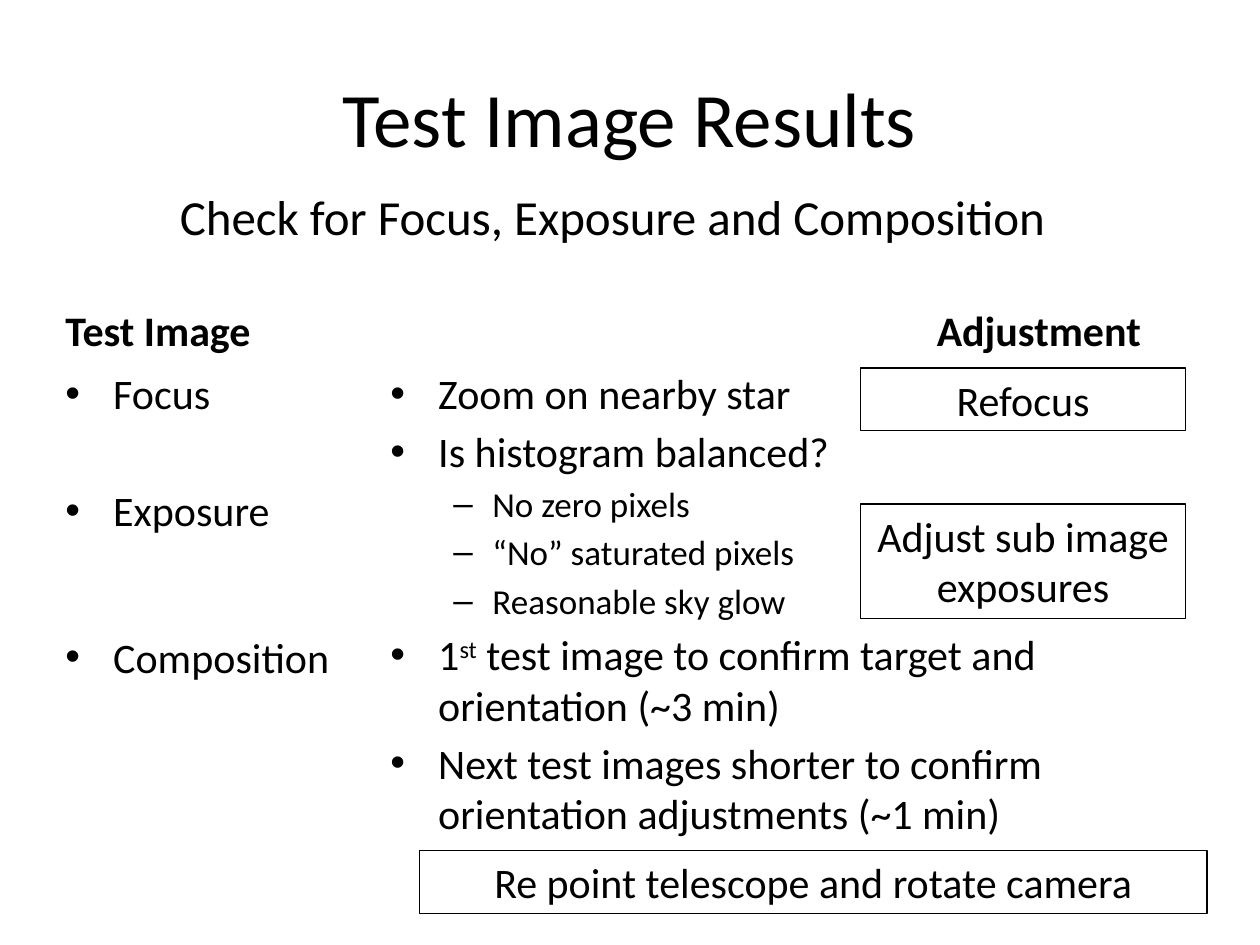
"""Build the slide on test image results and their adjustments."""
from dataclasses import dataclass

from lxml.etree import SubElement
from pptx import Presentation
from pptx.dml.color import RGBColor
from pptx.enum.shapes import MSO_SHAPE as Shape
from pptx.enum.text import MSO_ANCHOR as Anchor, PP_ALIGN as Align
from pptx.oxml.ns import qn
from pptx.util import Inches, Pt

BLACK = RGBColor(0, 0, 0)
FONT = "Calibri"
ADJUST_LEFT, ADJUST_WIDTH = 6.83, 2.58
LIST_TOP, LIST_HEIGHT = 2.87, 4.32


@dataclass(frozen=True)
class Level:
    mark: str
    left: float
    hanging: float
    size: float
    before: float


@dataclass(frozen=True)
class Item:
    text: str
    level: Level
    before: float | None = None


@dataclass(frozen=True)
class Box:
    text: str
    left: float
    top: float
    width: float
    height: float


CHECK = Level("•", 0.38, 0.38, 24, 4.3)
DETAIL = Level("–", 0.81, 0.31, 20, 3.6)

STEPS = (
    Item("Focus", CHECK),
    Item("Exposure", CHECK, 38.1),
    Item("Composition", CHECK, 54.7),
)
CRITERIA = (
    Item("Zoom on nearby star", CHECK),
    Item("Is histogram balanced?", CHECK),
    Item("No zero pixels", DETAIL),
    Item("“No” saturated pixels", DETAIL),
    Item("Reasonable sky glow", DETAIL),
    Item("1^st^ test image to confirm target and orientation (~3 min)", CHECK),
    Item("Next test images shorter to confirm orientation adjustments (~1 min)", CHECK),
)
ADJUSTMENTS = (
    Box("Refocus", ADJUST_LEFT, 2.92, ADJUST_WIDTH, 0.5),
    Box("Adjust sub image exposures", ADJUST_LEFT, 4, ADJUST_WIDTH, 0.91),
    Box("Re point telescope and rotate camera", 3.33, 6.75, 6.25, 0.5),
)


def write(paragraph, text: str, *, size: float = 24, bold: bool = False,
          align: Align = Align.LEFT) -> None:
    """Write text into a paragraph, raising the parts between carets."""
    paragraph.alignment = align
    for index, part in enumerate(text.split("^")):
        run = paragraph.add_run()
        run.text = part
        run.font.name = FONT
        run.font.size = Pt(size)
        run.font.bold = bold
        run.font.color.rgb = BLACK
        if index % 2:
            run._r.get_or_add_rPr().set("baseline", "30000")


def add_frame(slide, box: Box, anchor: Anchor = Anchor.TOP):
    """Add a wrapping text box and return its text frame."""
    frame = slide.shapes.add_textbox(
        Inches(box.left), Inches(box.top), Inches(box.width), Inches(box.height)
    ).text_frame
    frame.word_wrap = True
    frame.vertical_anchor = anchor
    return frame


def add_heading(slide, box: Box, *, anchor: Anchor, **style) -> None:
    """Add a single line of text."""
    write(add_frame(slide, box, anchor).paragraphs[0], box.text, **style)


def add_list(slide, items: tuple[Item, ...], left: float, width: float) -> None:
    """Add a bulleted list."""
    frame = add_frame(slide, Box("", left, LIST_TOP, width, LIST_HEIGHT))
    for index, item in enumerate(items):
        level = item.level
        paragraph = frame.add_paragraph() if index else frame.paragraphs[0]
        if index:
            paragraph.space_before = Pt(item.before or level.before)
        properties = paragraph._p.get_or_add_pPr()
        properties.set("marL", str(Inches(level.left)))
        properties.set("indent", str(-Inches(level.hanging)))
        SubElement(properties, qn("a:buFont"), typeface="Arial")
        SubElement(properties, qn("a:buChar"), char=level.mark)
        write(paragraph, item.text, size=level.size)


def add_adjustment(slide, box: Box) -> None:
    """Add an outlined box with centred text."""
    outline = slide.shapes.add_shape(
        Shape.RECTANGLE,
        Inches(box.left), Inches(box.top), Inches(box.width), Inches(box.height),
    )
    outline.shadow.inherit = False
    outline.fill.background()
    outline.line.color.rgb = BLACK
    outline.line.width = Pt(0.75)
    frame = outline.text_frame
    frame.word_wrap = True
    frame.vertical_anchor = Anchor.TOP
    write(frame.paragraphs[0], box.text, align=Align.CENTER)


def main() -> None:
    """Build and save the slide."""
    deck = Presentation()
    deck.slide_width, deck.slide_height = Inches(10), Inches(7.5)
    slide = deck.slides.add_slide(deck.slide_layouts[6])
    add_heading(slide, Box("Test Image Results", 0.5, 0.3, 9, 1.25),
                anchor=Anchor.MIDDLE, size=44, align=Align.CENTER)
    add_heading(slide, Box("Check for Focus, Exposure and Composition", 1.33, 1.43, 7.33, 0.57),
                anchor=Anchor.TOP, size=28)
    add_heading(slide, Box("Test Image", 0.42, 2.17, 4.08, 0.7),
                anchor=Anchor.BOTTOM, bold=True)
    add_heading(slide, Box("Adjustment", ADJUST_LEFT, 2.17, 2.83, 0.7),
                anchor=Anchor.BOTTOM, bold=True, align=Align.CENTER)
    add_list(slide, STEPS, 0.42, 2.58)
    add_list(slide, CRITERIA, 3, 6.67)
    for adjustment in ADJUSTMENTS:
        add_adjustment(slide, adjustment)
    deck.save("out.pptx")


if __name__ == "__main__":
    main()
